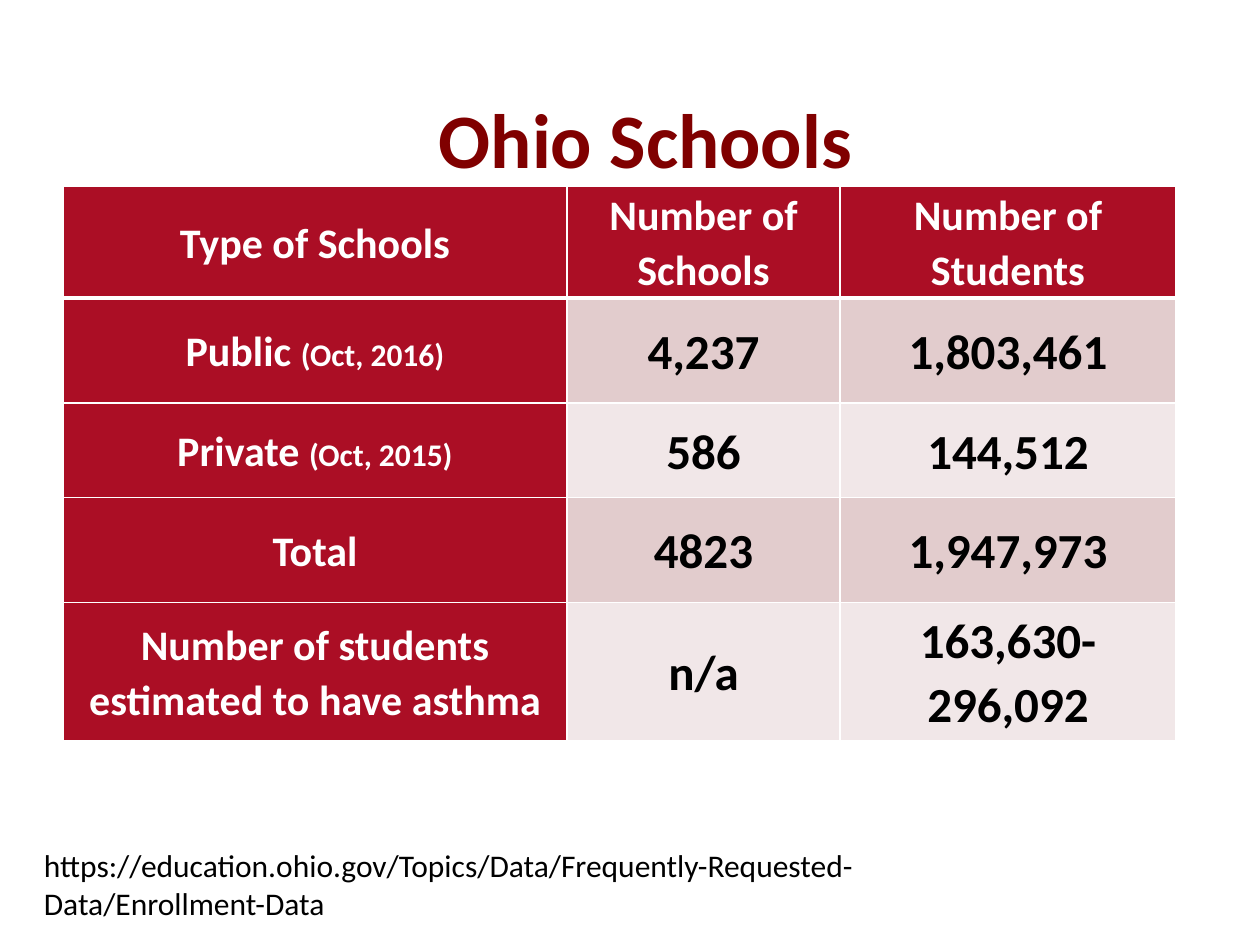
import pptx
import pptx.dml.color
import pptx.enum.text
import pptx.oxml
import pptx.oxml.ns
import pptx.util

RGB = pptx.dml.color.RGBColor
ALIGN = pptx.enum.text.PP_ALIGN
ANCHOR = pptx.enum.text.MSO_ANCHOR

MAROON = RGB(0x80, 0x00, 0x00)
RED = RGB(0xAB, 0x0E, 0x25)
ROSE = RGB(0xE2, 0xCC, 0xCD)
PALE = RGB(0xF1, 0xE7, 0xE8)
WHITE = RGB(0xFF, 0xFF, 0xFF)
BLACK = RGB(0x00, 0x00, 0x00)

COLS = 120  # slide grid, 12 columns to the inch


class Deck:
    """Holds the style and the current slide; lengths are grid units."""

    font = "Calibri"
    label, note, figure = 24, 18, 28

    def __init__(self):
        self.prs = pptx.Presentation()
        self.prs.slide_width = pptx.util.Inches(10)
        self.prs.slide_height = pptx.util.Inches(7.5)
        self.s = self.prs.slides.add_slide(self.prs.slide_layouts[5])

    def u(self, n):
        return int(self.prs.slide_width * n / COLS)

    def run(self, p, text, size, color, bold=True):
        r = p.add_run()
        r.text = text
        r.font.name = self.font
        r.font.size = pptx.util.Pt(size)
        r.font.bold = bold
        r.font.color.rgb = color

    def title(self, text, *box):
        sp = self.s.shapes.title
        sp.left, sp.top, sp.width, sp.height = map(self.u, box)
        tf = sp.text_frame
        tf.auto_size = pptx.enum.text.MSO_AUTO_SIZE.NONE
        tf.vertical_anchor = ANCHOR.MIDDLE
        p = tf.paragraphs[0]
        p.alignment = ALIGN.CENTER
        self.run(p, text, 44, MAROON)

    def borders(self, cell, **widths):
        tc_pr = cell._tc.get_or_add_tcPr()
        for side in "LRTB":
            w = pptx.util.Pt(widths.get(side, 1))
            tc_pr.append(pptx.oxml.parse_xml(
                f'<a:ln{side} {pptx.oxml.ns.nsdecls("a")} w="{w}"><a:solidFill>'
                f'<a:srgbClr val="{WHITE}"/></a:solidFill></a:ln{side}>'))

    def cell(self, cell, runs, color, fill, **widths):
        self.borders(cell, **widths)
        cell.fill.solid()
        cell.fill.fore_color.rgb = fill
        cell.vertical_anchor = ANCHOR.MIDDLE
        cell.margin_left = cell.margin_right = pptx.util.Inches(0.01)
        cell.margin_top = cell.margin_bottom = pptx.util.Inches(0.01)
        p = cell.text_frame.paragraphs[0]
        p.alignment = ALIGN.CENTER
        p.line_spacing = 1.07
        p.space_after = pptx.util.Pt(8)
        for text, size in runs:
            self.run(p, text, size, color)

    def table(self, rows, left, top, widths, heights):
        t = self.s.shapes.add_table(
            len(heights), len(widths), self.u(left), self.u(top),
            self.u(sum(widths)), self.u(sum(heights))).table
        for col, w in zip(t.columns, widths):
            col.width = self.u(w)
        for row, h in zip(t.rows, heights):
            row.height = self.u(h)
        for i, row in enumerate(rows):
            # A thick rule parts the header from the body
            rule = {0: {"B": 3}, 1: {"T": 3}}.get(i, {})
            for j, text in enumerate(row):
                if i == 0 or j == 0:
                    name, mark, note = text.partition("(")
                    runs = [(name, self.label)]
                    if mark:
                        runs.append((mark + note, self.note))
                    self.cell(t.cell(i, j), runs, WHITE, RED, **rule)
                else:
                    self.cell(t.cell(i, j), [(text, self.figure)], BLACK,
                              ROSE if i % 2 else PALE, **rule)

    def source(self, text, *box):
        sp = self.s.shapes.add_textbox(*map(self.u, box))
        sp.fill.solid()
        sp.fill.fore_color.rgb = WHITE
        tf = sp.text_frame
        tf.word_wrap = True
        tf.auto_size = pptx.enum.text.MSO_AUTO_SIZE.SHAPE_TO_FIT_TEXT
        self.run(tf.paragraphs[0], text, self.note, BLACK, bold=False)


def main():
    deck = Deck()

    # Title
    deck.title("Ohio Schools", 5, 9, 113, 8.2)

    # School and student counts
    deck.table([
        ("Type of Schools", "Number of Schools", "Number of Students"),
        ("Public (Oct, 2016)", "4,237", "1,803,461"),
        ("Private (Oct, 2015)", "586", "144,512"),
        ("Total", "4823", "1,947,973"),
        ("Number of students estimated to have asthma", "n/a",
         "163,630-296,092"),
    ], 6, 17.7, widths=(48, 26, 32), heights=(10.3, 10, 9, 10, 13.2))

    # Source link
    deck.source("https://education.ohio.gov/Topics/Data/"
                "Frequently-Requested-Data/Enrollment-Data", 3, 80, 80, 8.5)

    deck.prs.save("out.pptx")


if __name__ == "__main__":
    main()
